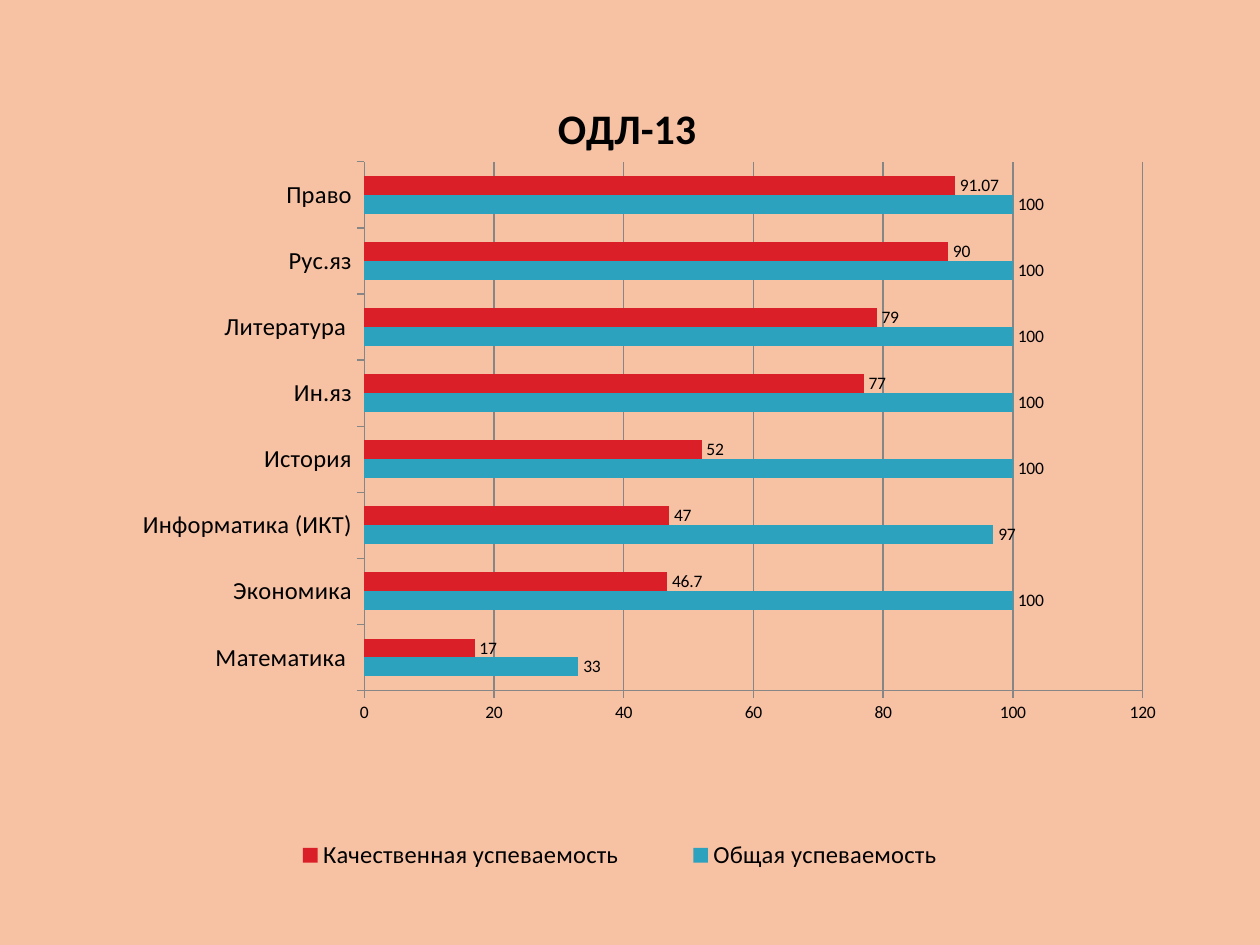
import pptx
import pptx.chart.data
import pptx.dml.color
import pptx.enum.chart
import pptx.oxml
import pptx.oxml.ns
import pptx.util
from pptx.util import Inches

HEX = {"back": "F7C1A4", "text": "000000", "grid": "868686",
       "total": "2DA2BF", "good": "DA1F28"}
enum = pptx.enum.chart


def write(frame, text, size=24, bold=True, color="text"):
    """Put formatted text into a text frame."""
    frame.text = text
    font = frame.paragraphs[0].runs[0].font
    font.name, font.size, font.bold = "Calibri", pptx.util.Pt(size), bold
    font.color.rgb = pptx.dml.color.RGBColor.from_string(HEX[color])


def place(part, index, inner=False, **spots):
    """Give a chart part a manual layout, in fractions of the chart."""
    for old in part.xpath("./c:layout"):
        part.remove(old)
    tags = '<c:layoutTarget val="inner"/>' if inner else ""
    tags += "".join(f'<c:{key}Mode val="edge"/>' for key in "xy")
    tags += "".join(f'<c:{key} val="{val}"/>' for key, val in spots.items())
    space = pptx.oxml.ns.nsdecls("c")
    part.insert(index, pptx.oxml.parse_xml(
        f"<c:layout {space}><c:manualLayout>{tags}</c:manualLayout></c:layout>"))


# Slide
deck = pptx.Presentation()
deck.slide_width, deck.slide_height = Inches(10), Inches(7.5)
slide = deck.slides.add_slide(deck.slide_layouts[6])
fill = slide.background.fill
fill.solid()
fill.fore_color.rgb = pptx.dml.color.RGBColor.from_string(HEX["back"])

# Chart data
data = pptx.chart.data.CategoryChartData()
data.categories = ["Математика ", "Экономика", "Информатика (ИКТ)", "История",
                   "Ин.яз", "Литература ", "Рус.яз", "Право"]
data.add_series("Общая успеваемость", [33, 100, 97, 100, 100, 100, 100, 100])
data.add_series("Качественная успеваемость", [17, 46.7, 47, 52, 77, 79, 90, 91.07])
chart = slide.shapes.add_chart(
    enum.XL_CHART_TYPE.BAR_CLUSTERED, Inches(0.31), Inches(0.39),
    Inches(9.22), Inches(6.88), data).chart
chart.font.name, chart.font.size = "Calibri", pptx.util.Pt(10)
chart.font.color.rgb = pptx.dml.color.RGBColor.from_string(HEX["text"])

# Title
write(chart.chart_title.text_frame, "ОДЛ-13")
chart.chart_title.include_in_layout = False

# Bars
plot = chart.plots[0]
plot.gap_width, plot.overlap, plot.vary_by_categories = 150, 0, False
for bar, name in zip(plot.series, ["total", "good"]):
    bar.format.fill.solid()
    bar.format.fill.fore_color.rgb = pptx.dml.color.RGBColor.from_string(HEX[name])
    bar.data_labels.show_value = True
    bar.data_labels.position = enum.XL_LABEL_POSITION.OUTSIDE_END

# Axes
cats, vals = chart.category_axis, chart.value_axis
vals.minimum_scale, vals.maximum_scale, vals.major_unit = 0, 120, 20
vals.has_major_gridlines = True
cats.tick_labels.font.size = pptx.util.Pt(14)
for axis in (cats, vals):
    axis.major_tick_mark = enum.XL_TICK_MARK.OUTSIDE
    axis.minor_tick_mark = enum.XL_TICK_MARK.NONE
for item in (cats, vals, vals.major_gridlines):
    item.format.line.width = pptx.util.Pt(0.75)
    item.format.line.color.rgb = pptx.dml.color.RGBColor.from_string(HEX["grid"])

# Legend
chart.has_legend = True
chart.legend.position = enum.XL_LEGEND_POSITION.BOTTOM
chart.legend.include_in_layout = False
chart.legend.font.size = pptx.util.Pt(14)

# Layout of the parts
root = chart.element
place(root.xpath("./c:chart/c:title")[0], 1, x=0.44, y=0.05)
place(root.xpath(".//c:plotArea")[0], 0, inner=True, x=0.28, y=0.13, w=0.67, h=0.61)
place(root.xpath(".//c:legend")[0], 1, x=0.17, y=0.89, w=0.66, h=0.08)

deck.save("out.pptx")
